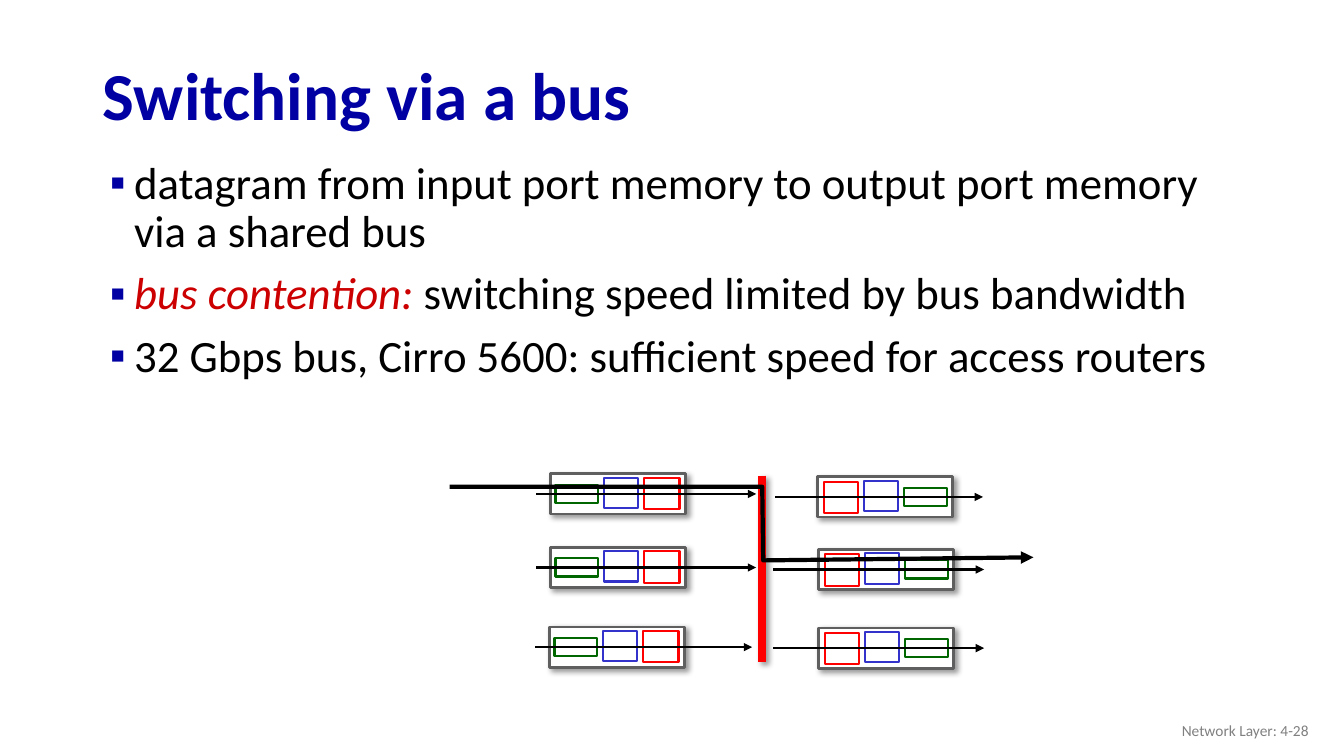
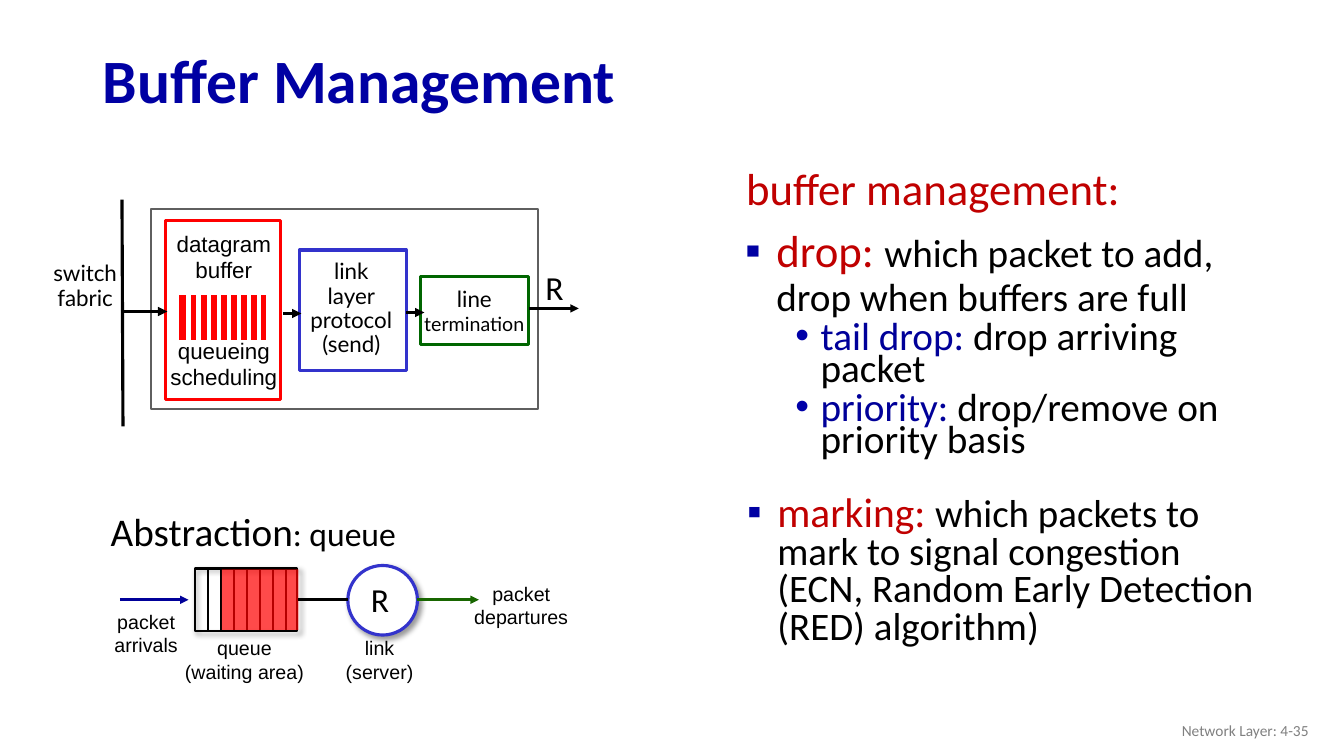
from dataclasses import dataclass

from lxml import etree
from pptx import Presentation
from pptx.dml.color import RGBColor
from pptx.enum.shapes import MSO_CONNECTOR, MSO_SHAPE
from pptx.enum.text import MSO_ANCHOR, MSO_AUTO_SIZE, PP_ALIGN
from pptx.oxml.ns import qn
from pptx.util import Inches, Pt

RECT, OVAL = MSO_SHAPE.RECTANGLE, MSO_SHAPE.OVAL
STRAIGHT = MSO_CONNECTOR.STRAIGHT
LEFT, CENTER, RIGHT = PP_ALIGN.LEFT, PP_ALIGN.CENTER, PP_ALIGN.RIGHT
TOP, MIDDLE = MSO_ANCHOR.TOP, MSO_ANCHOR.MIDDLE
NO_FIT = MSO_AUTO_SIZE.NONE
ONE_BODY, TWO_BODIES = 1, 3


@dataclass(frozen=True)
class Theme:
    font: str = "Calibri"
    diagram_font: str = "Lato"
    label_font: str = "Arial"
    navy: str = "0000A3"
    term: str = "000099"
    level_two: str = "0000A8"
    black: str = "000000"
    white: str = "FFFFFF"
    gray: str = "5F5F5F"
    footer: str = "808080"
    crimson: str = "CC0000"
    brick: str = "C00000"
    red: str = "FF0000"
    blue: str = "3333CC"
    green: str = "006600"
    departure: str = "186600"
    title_size: float = 48
    small_title_size: float = 44
    body_size: float = 32
    detail_size: float = 28
    marking_size: float = 29.6
    marking_detail_size: float = 27.8
    symbol_size: float = 24
    diagram_size: float = 16
    label_size: float = 14
    footer_size: float = 11


THEME = Theme()


def rgb(color):
    return RGBColor.from_string(color)


def add_span(para, text, *, size, color=THEME.black, font=THEME.font,
             bold=False, italic=False):
    span = para.add_run()
    span.text = text
    span.font.size = Pt(size)
    span.font.name = font
    span.font.bold = bold
    span.font.italic = italic
    span.font.color.rgb = rgb(color)


def set_bullet(para, margin, hanging, mark, color):
    """Indent the paragraph and give it a bullet, or none if mark is empty."""
    props = para._p.get_or_add_pPr()
    props.set("marL", str(Inches(margin)))
    props.set("indent", str(Inches(hanging)))
    if not mark:
        etree.SubElement(props, qn("a:buNone"))
        return
    bullet_color = etree.SubElement(props, qn("a:buClr"))
    etree.SubElement(bullet_color, qn("a:srgbClr"), val=color)
    etree.SubElement(props, qn("a:buFont"), typeface=THEME.label_font)
    etree.SubElement(props, qn("a:buChar"), char=mark)


def write_lines(frame, lines, *, align=LEFT, spacing=1.0, gaps=None, **style):
    """Write lines of (text, format) spans; gaps maps a line to its space before."""
    for number, spans in enumerate(lines):
        para = frame.paragraphs[0] if number == 0 else frame.add_paragraph()
        para.alignment = align
        para.line_spacing = spacing
        para.space_before = Pt((gaps or {}).get(number, 0))
        if isinstance(spans, str):
            spans = [(spans, {})]
        for text, changes in spans:
            add_span(para, text, **{**style, **changes})


def place(shape, box):
    shape.left, shape.top, shape.width, shape.height = map(Inches, box)


def add_label(slide, box, lines, *, anchor=TOP, wrap=False, inset=0.1, **style):
    frame = slide.shapes.add_textbox(*map(Inches, box)).text_frame
    frame.word_wrap = wrap
    frame.vertical_anchor = anchor
    frame.margin_left = frame.margin_right = Inches(inset)
    write_lines(frame, lines, **style)


def fill_list(holder, box, items):
    """Each item holds spans, level, margin, hanging, mark, color, spacing, before."""
    place(holder, box)
    frame = holder.text_frame
    frame.auto_size = NO_FIT
    frame.vertical_anchor = TOP
    for number, item in enumerate(items):
        para = frame.paragraphs[0] if number == 0 else frame.add_paragraph()
        para.level = item.get("level", 0)
        para.alignment = LEFT
        para.line_spacing = item.get("spacing", 0.9)
        para.space_before = Pt(item.get("before", 10))
        para.space_after = Pt(0)
        set_bullet(para, item["margin"], item["hanging"],
                   item.get("mark", "▪"), item.get("color", THEME.navy))
        for text, style in item["spans"]:
            add_span(para, text, **style)


def add_shadow(shape):
    effects = shape._element.spPr.find(qn("a:effectLst"))
    shadow = etree.SubElement(effects, qn("a:outerShdw"), blurRad=str(Pt(4)),
                              dist=str(Pt(3)), dir=str(45 * 60000))
    color = etree.SubElement(shadow, qn("a:srgbClr"), val=THEME.black)
    etree.SubElement(color, qn("a:alpha"), val="40000")


def add_box(slide, box, *, fill=THEME.white, line=None, width=1.5, kind=RECT,
            shadow=False, opacity=None):
    shape = slide.shapes.add_shape(kind, *map(Inches, box))
    shape.shadow.inherit = False
    if fill:
        shape.fill.solid()
        shape.fill.fore_color.rgb = rgb(fill)
    else:
        shape.fill.background()
    if opacity:
        color = shape._element.spPr.find(qn("a:solidFill")).find(qn("a:srgbClr"))
        etree.SubElement(color, qn("a:alpha"), val=str(opacity * 1000))
    if line:
        shape.line.color.rgb = rgb(line)
        shape.line.width = Pt(width)
    else:
        shape.line.fill.background()
    if shadow:
        add_shadow(shape)


def style_line(shape, color, width, arrow):
    shape.line.color.rgb = rgb(color)
    shape.line.width = Pt(width)
    if arrow:
        etree.SubElement(shape.line._get_or_add_ln(), qn("a:tailEnd"), type="triangle")


def add_line(slide, start, end, *, color=THEME.black, width=1.5, arrow=False,
             shadow=False):
    line = slide.shapes.add_connector(STRAIGHT, *map(Inches, (*start, *end)))
    style_line(line, color, width, arrow)
    etree.SubElement(line._element.spPr, qn("a:effectLst"))
    if shadow:
        add_shadow(line)


def add_dividers(slide, first, step, count, top, bottom, **style):
    for number in range(count):
        x = first + number * step
        add_line(slide, (x, top), (x, bottom), **style)


def new_slide(deck, layout, title, page, *, title_top, title_size):
    """Add a slide with the shared title style and footer."""
    slide = deck.slides.add_slide(deck.slide_layouts[layout])
    heading = slide.shapes.title
    place(heading, (0.92, title_top, 11.5, 0.98))
    heading.text_frame.auto_size = NO_FIT
    heading.text_frame.vertical_anchor = MIDDLE
    write_lines(heading.text_frame, [title], spacing=0.9, size=title_size,
                color=THEME.navy, bold=True)
    add_label(slide, (10.08, 7.05, 3, 0.4), [f"Network Layer: {page}"],
              anchor=MIDDLE, wrap=True, align=RIGHT, size=THEME.footer_size,
              color=THEME.footer)
    return slide


def draw_port(slide, left, top, stages, arrow_start, arrow_end):
    """Draw a port: a frame, its three stages and the arrow through them."""
    add_box(slide, (left, top, 1.34, 0.4), line=THEME.gray, width=2, shadow=True)
    for x, y, width, height, color in stages:
        add_box(slide, (left + x, top + y, width, height), line=color)
    add_line(slide, (arrow_start, top + 0.2), (arrow_end, top + 0.2), arrow=True)


def draw_datagram_route(slide):
    points = [(4.46, 4.83), (7.56, 4.83), (7.57, 5.56), (10.25, 5.53)]
    start, *rest = [(Inches(x), Inches(y)) for x, y in points]
    builder = slide.shapes.build_freeform(*start)
    builder.add_line_segments(rest, close=False)
    route = builder.convert_to_shape()
    route.shadow.inherit = False
    route.fill.background()
    style_line(route, THEME.black, 3, True)


def build_bus_slide(deck):
    slide = new_slide(deck, ONE_BODY, "Switching via a bus", "4-28",
                      title_top=0.49, title_size=THEME.title_size)
    plain = dict(size=THEME.body_size)
    emphasis = dict(size=THEME.body_size, color=THEME.crimson, italic=True)
    points = [
        [("datagram from input port memory to output port memory via a shared bus", plain)],
        [("bus contention:", emphasis),
         (" switching speed limited by bus bandwidth", plain)],
        [("32 Gbps bus, Cirro 5600: sufficient speed for access routers", plain)],
    ]
    fill_list(slide.placeholders[1], (0.84, 1.54, 11.56, 3.03),
              [dict(spans=spans, margin=0.39, hanging=-0.24) for spans in points])

    input_stages = [(0.05, 0.11, 0.42, 0.18, THEME.green),
                    (0.53, 0.04, 0.34, 0.3, THEME.blue),
                    (0.93, 0.04, 0.35, 0.31, THEME.red)]
    output_stages = [(0.86, 0.11, 0.42, 0.18, THEME.green),
                     (0.46, 0.04, 0.34, 0.3, THEME.blue),
                     (0.06, 0.05, 0.34, 0.31, THEME.red)]
    for left, top, end in [(5.46, 4.7, 7.5), (5.46, 5.43, 7.5), (5.45, 6.22, 7.46)]:
        draw_port(slide, left, top, input_stages, left - 0.14, end)
    add_line(slide, (7.56, 4.72), (7.56, 6.57), color=THEME.red, width=6, shadow=True)
    for left, top, start in [(8.11, 4.73, 7.69), (8.12, 5.45, 7.67), (8.12, 6.23, 7.67)]:
        draw_port(slide, left, top, output_stages, start, left + 1.64)
    draw_datagram_route(slide)


def fill_buffer_lists(slide):
    heading = dict(size=THEME.body_size, color=THEME.brick)
    detail = dict(size=THEME.detail_size)
    term = dict(size=THEME.detail_size, color=THEME.term)
    nested = dict(level=1, margin=0.76, hanging=-0.25, mark="•",
                  color=THEME.level_two, spacing=Pt(22.8), before=5)
    fill_list(slide.placeholders[1], (7.28, 1.6, 5.43, 5.48), [
        dict(spans=[("buffer management:", heading)], margin=0.26, hanging=-0.24,
             mark=""),
        dict(spans=[("drop: ", heading),
                    ("which packet to add, drop when buffers are full", detail)],
             margin=0.32, hanging=-0.31),
        dict(spans=[("tail drop: ", term), ("drop arriving packet", detail)], **nested),
        dict(spans=[("priority: ", term), ("drop/remove on priority basis", detail)],
             **nested),
    ])
    fill_list(slide.placeholders[2], (7.16, 4.87, 5.43, 1.69), [
        dict(spans=[("marking: ", dict(size=THEME.marking_size, color=THEME.brick)),
                    ("which packets to mark to signal congestion "
                     "(ECN, Random Early Detection (RED) algorithm)",
                     dict(size=THEME.marking_detail_size))],
             margin=0.45, hanging=-0.3, spacing=0.8)])


def draw_output_port(slide):
    diagram = dict(size=THEME.diagram_size, font=THEME.diagram_font, align=CENTER,
                   anchor=MIDDLE, inset=0)
    add_box(slide, (1.5, 2.07, 3.84, 1.99), line=THEME.gray)
    stages = [((4.17, 2.74, 1.07, 0.68), THEME.green),
              ((2.97, 2.48, 1.06, 1.2), THEME.blue),
              ((1.64, 2.19, 1.14, 1.77), THEME.red)]
    for box, color in stages:
        add_box(slide, box, line=color, width=2.25)
    add_label(slide, stages[0][0],
              ["line", [("termination", dict(size=THEME.label_size))]], **diagram)
    add_label(slide, (3, 2.64, 0.97, 0.85), ["link", "layer", "protocol", "(send)"],
              spacing=0.9, **diagram)
    add_label(slide, (0.36, 2.42, 0.97, 0.85), ["switch", "fabric"], spacing=0.9,
              **diagram)
    add_box(slide, (1.75, 2.91, 0.91, 0.48), fill=THEME.red, line=THEME.white, width=3)
    add_dividers(slide, 1.87, 0.1, 8, 2.92, 3.38, color=THEME.white, width=3)
    add_label(slide, (1.57, 2.23, 1.3, 1.72),
              ["datagram", "buffer", "queueing", "scheduling"], gaps={2: 38},
              align=CENTER, size=THEME.diagram_size, font=THEME.label_font)
    add_line(slide, (1.21, 1.98), (1.22, 4.23), width=2.25)
    for start, end, y, width in [(1.2, 1.66, 3.09, 2.25), (2.81, 2.99, 3.11, 2.25),
                                 (4.03, 4.21, 3.1, 2.25), (5.25, 5.74, 3.06, 2)]:
        add_line(slide, (start, y), (end, y), width=width, arrow=True)
    add_label(slide, (5.31, 2.6, 0.38, 0.5), ["R"], size=THEME.symbol_size)


def draw_queue(slide):
    add_label(slide, (1, 4.98, 3.07, 0.57),
              [[("Abstraction", dict(size=THEME.detail_size)), (": queue", {})]],
              size=THEME.symbol_size)
    add_box(slide, (1.93, 5.64, 1.02, 0.62), fill=None, line=THEME.black, shadow=True)
    add_dividers(slide, 2.06, 0.13, 7, 5.64, 6.25)
    add_box(slide, (2.2, 5.65, 0.76, 0.6), fill=THEME.red, opacity=71)
    add_box(slide, (3.45, 5.61, 0.69, 0.69), line=THEME.blue, width=2.25, kind=OVAL,
            shadow=True)
    for start, end, color, arrow in [(1.19, 1.87, THEME.term, True),
                                     (2.96, 3.45, THEME.black, False),
                                     (4.14, 4.75, THEME.departure, True)]:
        add_line(slide, (start, 5.95), (end, 5.95), color=color, width=2, arrow=arrow)
    for left, top, width, lines in [(1.73, 6.26, 1.39, ["queue", "(waiting area)"]),
                                    (1.03, 6, 0.84, ["packet", "arrivals"]),
                                    (4.6, 5.72, 1.14, ["packet", "departures"]),
                                    (3.3, 6.26, 0.93, ["link", "(server)"])]:
        add_label(slide, (left, top, width, 0.57), lines, align=CENTER,
                  size=THEME.label_size, font=THEME.label_font)
    add_label(slide, (3.58, 5.69, 0.38, 0.5), ["R"], size=THEME.symbol_size)


def build_buffer_slide(deck):
    slide = new_slide(deck, TWO_BODIES, "Buffer Management", "4-35",
                      title_top=0.34, title_size=THEME.small_title_size)
    fill_buffer_lists(slide)
    draw_output_port(slide)
    draw_queue(slide)


def main():
    deck = Presentation()
    deck.slide_width, deck.slide_height = Inches(13.33), Inches(7.5)
    build_bus_slide(deck)
    build_buffer_slide(deck)
    deck.save("out.pptx")


if __name__ == "__main__":
    main()
